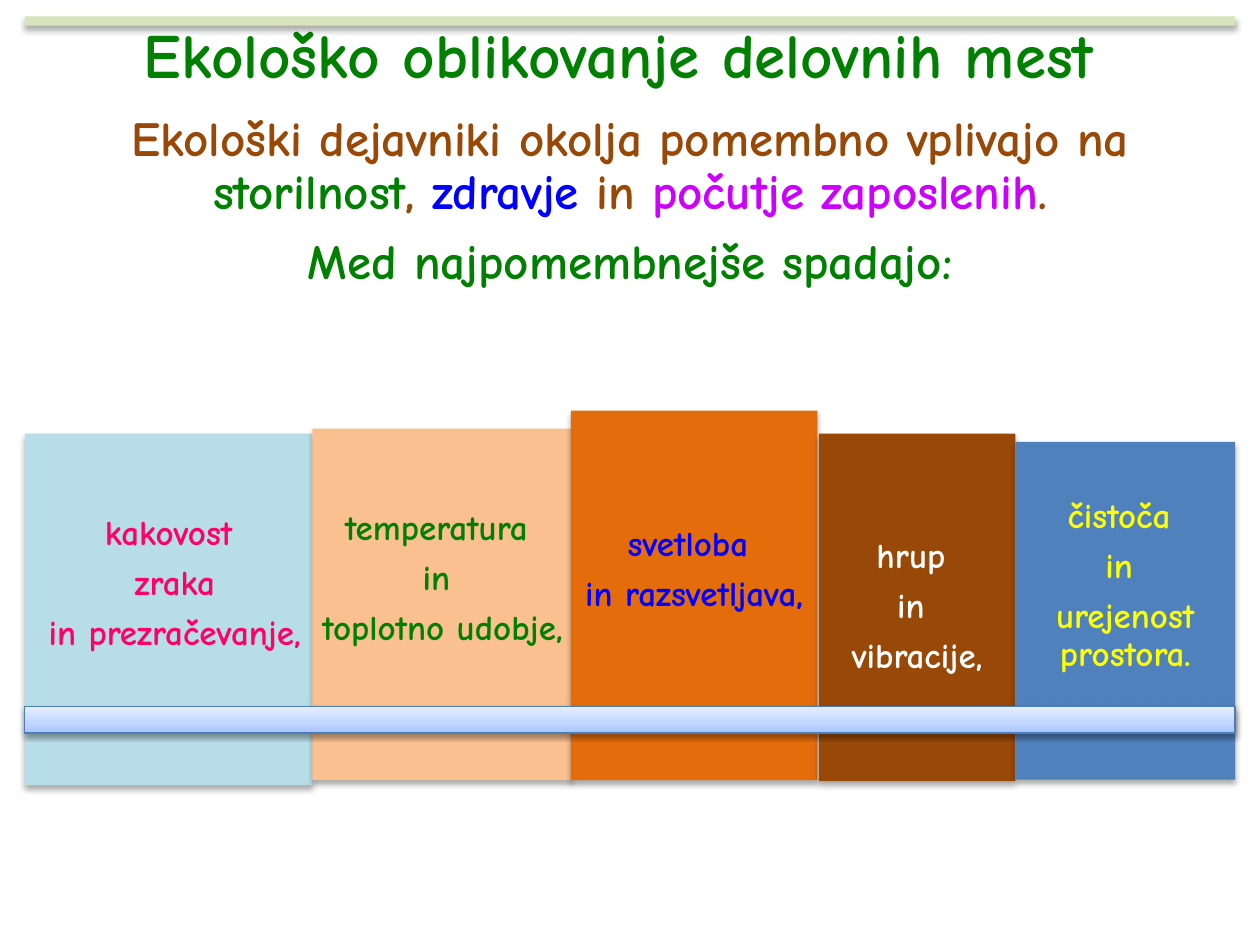
from lxml import etree
from pptx import Presentation
from pptx.dml.color import RGBColor
from pptx.enum import shapes, text
from pptx.oxml import parse_xml
from pptx.oxml.ns import nsdecls
from pptx.util import Cm, Pt

FONT = "Comic Neue"
GREEN = RGBColor(0x00, 0x80, 0x00)
BROWN = RGBColor(0x98, 0x48, 0x07)
BLUE = RGBColor(0x00, 0x00, 0xFF)
VIOLET = RGBColor(0xCC, 0x00, 0xFF)
PINK = RGBColor(0xFF, 0x00, 0x66)
WHITE = RGBColor(0xFF, 0xFF, 0xFF)
YELLOW = RGBColor(0xFF, 0xFF, 0x00)
PALE_GREEN = RGBColor(0xD7, 0xE4, 0xBD)
PALE_BLUE = RGBColor(0xB7, 0xDE, 0xE8)
PEACH = RGBColor(0xFA, 0xC0, 0x90)
ORANGE = RGBColor(0xE4, 0x6C, 0x0A)
STEEL = RGBColor(0x4F, 0x81, 0xBD)
STRIP_LINE = RGBColor(0x4B, 0x7E, 0xBC)
STRIP_STOPS = [(0, RGBColor(0xA4, 0xC4, 0xFF)),
               (35, RGBColor(0xBF, 0xD4, 0xFF)),
               (100, RGBColor(0xE6, 0xEE, 0xFF))]

LEFT, WIDTH = 0.5, 24.4
INSET = 0.2
LIFT = 1.01

INTRO = [
    [("Ekološki dejavniki okolja pomembno vplivajo na ", BROWN),
     ("storilnost", GREEN), (", ", BROWN), ("zdravje ", BLUE),
     ("in ", BROWN), ("počutje zaposlenih", VIOLET), (".", BROWN)],
    [("Med najpomembnejše spadajo:", GREEN)],
]

FACTORS = [
    ((0.5, 8.74, 5.8, 7.09), PALE_BLUE, PINK, LIFT,
     ["kakovost", " zraka", " in prezračevanje,"]),
    ((6.3, 8.64, 5.25, 7.09), PEACH, GREEN, LIFT,
     ["temperatura ", "in ", "toplotno udobje,"]),
    ((11.51, 8.28, 4.97, 7.45), ORANGE, BLUE, LIFT,
     ["svetloba ", "in razsvetljava,"]),
    ((16.51, 8.74, 3.96, 7.01), BROWN, WHITE, 0,
     ["hrup ", "in ", "vibracije,"]),
    ((20.47, 8.91, 4.43, 6.81), STEEL, YELLOW, LIFT,
     ["čistoča ", "in ", "urejenost prostora."]),
]


def set_frame(tf, inset, bottom, anchor):
    tf.word_wrap = True
    tf.auto_size = text.MSO_AUTO_SIZE.NONE
    tf.vertical_anchor = anchor
    tf.margin_left = tf.margin_right = tf.margin_top = Cm(inset)
    tf.margin_bottom = Cm(bottom)


def write_paragraphs(tf, paragraphs, size):
    for i, runs in enumerate(paragraphs):
        p = tf.add_paragraph() if i else tf.paragraphs[0]
        p.alignment = text.PP_ALIGN.CENTER
        p.line_spacing = 0.9
        p.space_before = Pt(0)
        p.space_after = Pt(round(size * 0.35, 1))
        for words, color in runs:
            r = p.add_run()
            r.text = words
            r.font.name = FONT
            r.font.size = Pt(size)
            r.font.bold = True
            r.font.color.rgb = color


def add_shadow(sp, blur, distance, alpha):
    sp.shadow.inherit = False
    effects = sp._element.spPr.find("{*}effectLst")
    effects.append(parse_xml(
        f'<a:outerShdw {nsdecls("a")} blurRad="{Pt(blur)}" dist="{Pt(distance)}" '
        f'dir="5400000" rotWithShape="0"><a:srgbClr val="000000">'
        f'<a:alpha val="{alpha * 1000}"/></a:srgbClr></a:outerShdw>'))


def add_box(s, box, fill):
    sp = s.shapes.add_shape(shapes.MSO_SHAPE.RECTANGLE, *map(Cm, box))
    sp.fill.solid()
    sp.fill.fore_color.rgb = fill
    sp.line.fill.background()
    add_shadow(sp, 3.5, 2.2, 32)
    return sp


def add_factor(s, box, fill, color, lift, lines):
    tf = add_box(s, box, fill).text_frame
    set_frame(tf, INSET, INSET + lift, text.MSO_ANCHOR.MIDDLE)
    write_paragraphs(tf, [[(line, color)] for line in lines], 20)


def add_strip(s):
    sp = s.shapes.add_shape(shapes.MSO_SHAPE.RECTANGLE,
                            *map(Cm, (LEFT, 14.25, WIDTH, 0.53)))
    sp.fill.gradient()
    grad = sp._element.spPr.find("{*}gradFill")
    stops = "".join(f'<a:gs pos="{pos * 1000}"><a:srgbClr val="{color}"/></a:gs>'
                    for pos, color in STRIP_STOPS)
    new_grad = etree.fromstring(
        f'<a:gradFill {nsdecls("a")} rotWithShape="1"><a:gsLst>{stops}</a:gsLst>'
        f'<a:lin ang="16200000" scaled="0"/></a:gradFill>')
    grad.getparent().replace(grad, new_grad)
    sp.line.color.rgb = STRIP_LINE
    sp.line.width = Pt(0.75)
    add_shadow(sp, 3.1, 1.6, 38)


def set_title(s):
    title = s.shapes.title
    title.left, title.top, title.width, title.height = map(Cm, (LEFT, 0.48, WIDTH, 1.75))
    set_frame(title.text_frame, 0, 0, text.MSO_ANCHOR.TOP)
    write_paragraphs(title.text_frame,
                     [[("Ekološko oblikovanje delovnih mest ", GREEN)]], 36)


def add_intro(s):
    tf = s.shapes.add_textbox(*map(Cm, (LEFT, 2.3, WIDTH, 3.65))).text_frame
    set_frame(tf, 0, 0, text.MSO_ANCHOR.TOP)
    tf.margin_left = tf.margin_right = Cm(0.46)
    write_paragraphs(tf, INTRO, 28)


def main():
    prs = Presentation()
    prs.slide_width, prs.slide_height = Cm(25.4), Cm(19.05)
    s = prs.slides.add_slide(prs.slide_layouts[5])
    set_title(s)
    add_box(s, (LEFT, 0.33, WIDTH, 0.19), PALE_GREEN)
    add_intro(s)
    for factor in FACTORS:
        add_factor(s, *factor)
    add_strip(s)
    prs.save("out.pptx")


if __name__ == "__main__":
    main()
